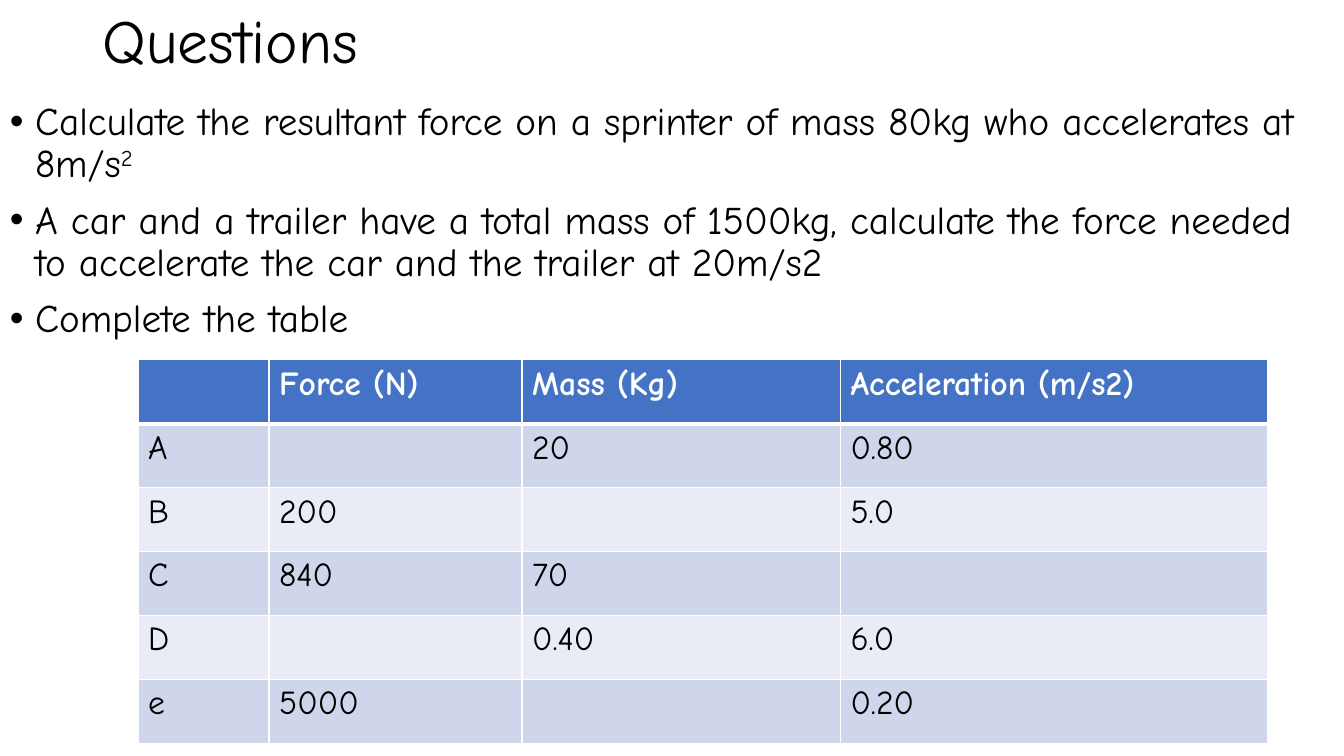
from dataclasses import dataclass

from lxml import etree
from pptx import Presentation
from pptx.dml.color import RGBColor
from pptx.enum.text import MSO_ANCHOR, MSO_AUTO_SIZE, PP_ALIGN
from pptx.oxml.ns import qn
from pptx.util import Pt

LEFT = PP_ALIGN.LEFT
MIDDLE = MSO_ANCHOR.MIDDLE
NO_AUTOFIT = MSO_AUTO_SIZE.NONE

FONT = "Comic Neue"
BLACK = RGBColor(0x00, 0x00, 0x00)
WHITE = RGBColor(0xFF, 0xFF, 0xFF)
HEADER_BLUE = RGBColor(0x44, 0x72, 0xC4)
BAND_DARK = RGBColor(0xCF, 0xD5, 0xEA)
BAND_LIGHT = RGBColor(0xE9, 0xEB, 0xF5)

TITLE_ONLY_LAYOUT = 5
BULLET_INDENT = Pt(18)
COLUMN_WIDTHS = (93.6, 180.7, 227.5, 305.3)
ROW_HEIGHT = 45.72


@dataclass
class Question:
    text: str
    superscript: str = ""


QUESTIONS = (
    Question("Calculate the resultant force on a sprinter of mass 80kg "
             "who accelerates at 8m/s", "2"),
    Question("A car and a trailer have a total mass of 1500kg, calculate the "
             "force needed to accelerate the car and the trailer at 20m/s2"),
    Question("Complete the table"),
)

TABLE_ROWS = (
    ("", "Force (N)", "Mass (Kg)", "Acceleration (m/s2)"),
    ("A", "", "20", "0.80"),
    ("B", "200", "", "5.0"),
    ("C", "840", "70", ""),
    ("D", "", "0.40", "6.0"),
    ("e", "5000", "", "0.20"),
)


def add_run(paragraph, text: str, size: float, color: RGBColor = BLACK, bold: bool = False):
    run = paragraph.add_run()
    run.text = text
    run.font.name = FONT
    run.font.size = Pt(size)
    run.font.bold = bold
    run.font.color.rgb = color
    return run


def add_title(slide, text: str) -> None:
    title = slide.shapes.title
    title.left, title.top, title.width, title.height = Pt(66.24), Pt(1.44), Pt(828), Pt(59)
    frame = title.text_frame
    frame.auto_size = NO_AUTOFIT
    frame.vertical_anchor = MIDDLE
    paragraph = frame.paragraphs[0]
    paragraph.alignment = LEFT
    paragraph.line_spacing = 0.9
    add_run(paragraph, text, 44)


def set_bullet(paragraph) -> None:
    properties = paragraph._p.get_or_add_pPr()
    properties.set("marL", str(BULLET_INDENT))
    properties.set("indent", str(-BULLET_INDENT))
    etree.SubElement(properties, qn("a:buFont"), typeface="Arial")
    etree.SubElement(properties, qn("a:buChar"), char="•")


def add_questions(slide, questions: tuple[Question, ...]) -> None:
    frame = slide.shapes.add_textbox(Pt(0), Pt(69.1), Pt(960), Pt(178.6)).text_frame
    frame.word_wrap = True
    for index, question in enumerate(questions):
        paragraph = frame.add_paragraph() if index else frame.paragraphs[0]
        paragraph.line_spacing = 0.9
        paragraph.space_before = Pt(10)
        set_bullet(paragraph)
        add_run(paragraph, question.text, 28)
        if question.superscript:
            run = add_run(paragraph, question.superscript, 28)
            run._r.get_or_add_rPr().set("baseline", "30000")


def set_borders(cell, top: float, bottom: float) -> None:
    """Give the cell white borders; must run before its fill is set."""
    properties = cell._tc.get_or_add_tcPr()
    for side, width in (("L", 1), ("R", 1), ("T", top), ("B", bottom)):
        line = etree.SubElement(properties, qn(f"a:ln{side}"), w=str(Pt(width)))
        fill = etree.SubElement(line, qn("a:solidFill"))
        etree.SubElement(fill, qn("a:srgbClr"), val=str(WHITE))


def add_table(slide, rows: tuple[tuple[str, ...], ...]) -> None:
    table = slide.shapes.add_table(
        len(rows), len(COLUMN_WIDTHS), Pt(98.6), Pt(257),
        Pt(sum(COLUMN_WIDTHS)), Pt(ROW_HEIGHT * len(rows))).table
    for column, width in zip(table.columns, COLUMN_WIDTHS):
        column.width = Pt(width)
    for row_index, texts in enumerate(rows):
        table.rows[row_index].height = Pt(ROW_HEIGHT)
        is_header = row_index == 0
        band = BAND_DARK if row_index % 2 else BAND_LIGHT
        for column_index, text in enumerate(texts):
            cell = table.cell(row_index, column_index)
            set_borders(cell, top=3 if row_index == 1 else 1, bottom=3 if is_header else 1)
            cell.fill.solid()
            cell.fill.fore_color.rgb = HEADER_BLUE if is_header else band
            if text:
                add_run(cell.text_frame.paragraphs[0], text, 24,
                        WHITE if is_header else BLACK, is_header)


def main() -> None:
    presentation = Presentation()
    presentation.slide_width, presentation.slide_height = Pt(960), Pt(540)
    slide = presentation.slides.add_slide(presentation.slide_layouts[TITLE_ONLY_LAYOUT])
    add_title(slide, "Questions")
    add_questions(slide, QUESTIONS)
    add_table(slide, TABLE_ROWS)
    presentation.save("out.pptx")


if __name__ == "__main__":
    main()
